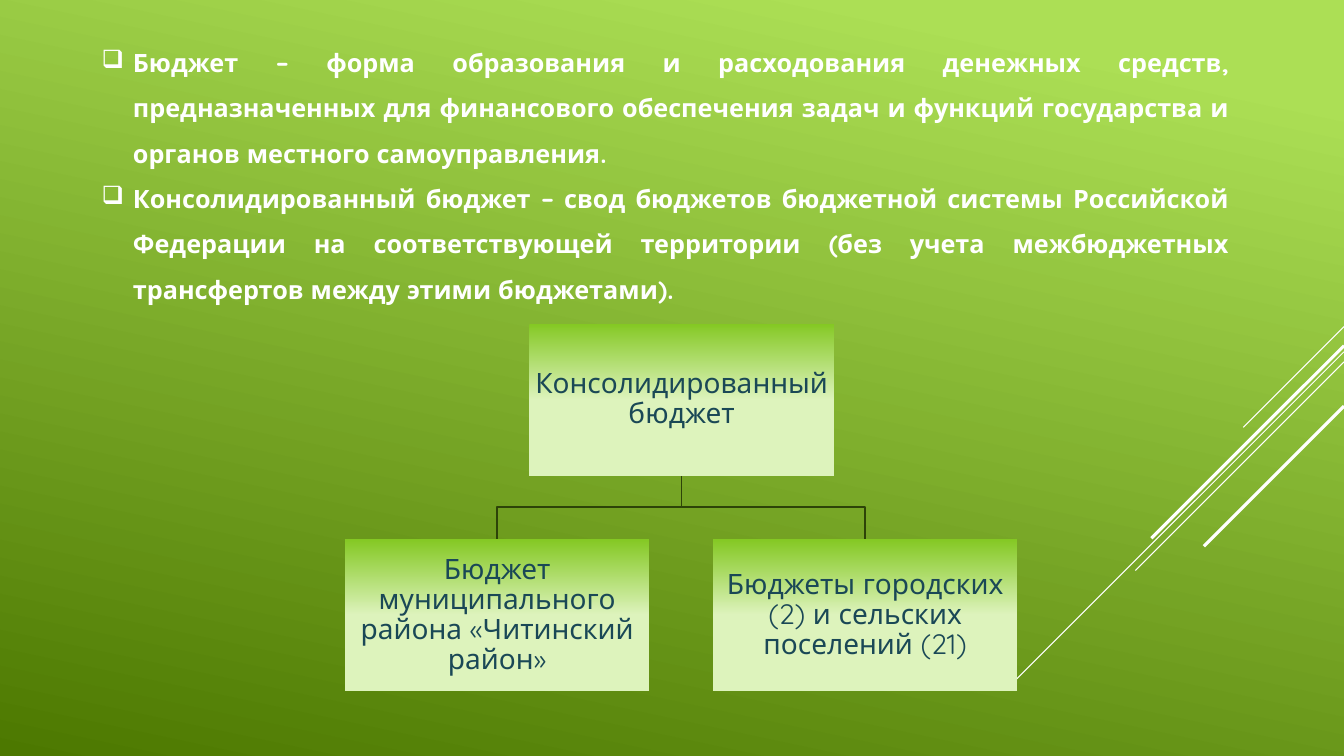
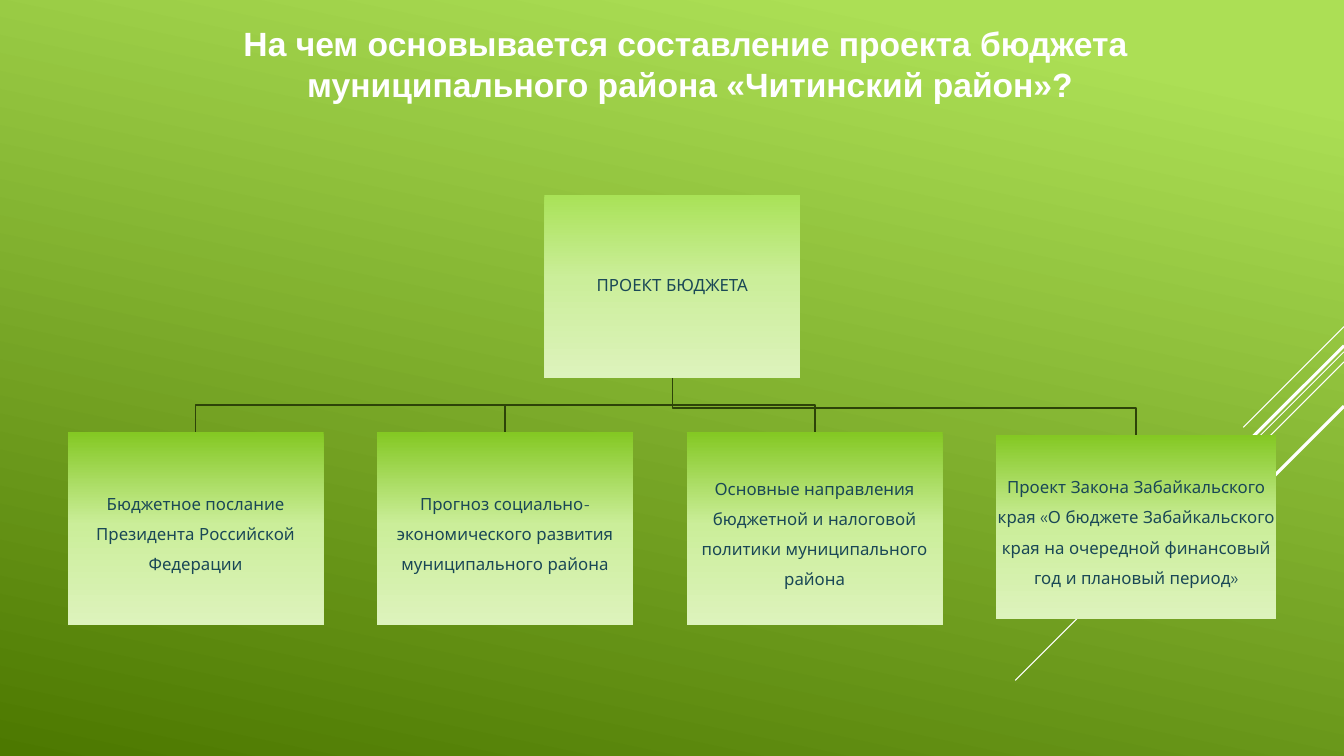
from dataclasses import dataclass

from lxml.etree import SubElement
from pptx import Presentation
from pptx.dml.color import RGBColor
from pptx.dml.fill import FillFormat
from pptx.enum.shapes import MSO_CONNECTOR, MSO_SHAPE
from pptx.enum.text import MSO_ANCHOR, MSO_AUTO_SIZE, PP_ALIGN
from pptx.oxml.ns import qn
from pptx.oxml.xmlchemy import BaseOxmlElement
from pptx.slide import Slide
from pptx.text.text import Font
from pptx.util import Inches, Pt

WIDTH, HEIGHT = 13.33, 7.5
TITLE_ONLY, BLANK = 5, 6
WHITE = "FFFFFF"
INK = "1A4856"
BRANCH = "2D4308"
BODY_FONT, TITLE_FONT = "Quicksand", "Arial"

Stops = tuple[tuple[int, str], ...]
BACKGROUND: Stops = ((10, "ACDF55"), (100, "4C7800"))
BUDGET_FILL: Stops = ((0, "84C823"), (50, "DDF3BC"), (100, "DDF3BC"))
PROJECT_FILL: Stops = ((0, "A9E257"), (46, "CBEE9A"), (100, "DDF3BC"))
BASIS_FILL: Stops = ((0, "84C823"), (48, "CBEE9A"), (100, "DDF3BC"))


@dataclass(frozen=True)
class Ray:
    """A 45-degree line running down and left from the right slide edge."""
    top: float
    run: float
    weight: float


@dataclass(frozen=True)
class Node:
    text: str
    left: float
    top: float
    width: float
    height: float
    stops: Stops
    size: int
    spacing: float = 0.9

    @property
    def center(self) -> float:
        return self.left + self.width / 2


RAYS = (
    Ray(3.24, 1.0, 0.75),
    Ray(3.49, 3.26, 0.75),
    Ray(3.59, 2.07, 0.75),
    Ray(3.43, 1.91, 2.25),
    Ray(4.03, 1.39, 2.25),
)

DEFINITIONS = (
    "Бюджет – форма образования и расходования денежных средств, предназначенных "
    "для финансового обеспечения задач и функций государства и органов местного "
    "самоуправления.",
    "Консолидированный бюджет – свод бюджетов бюджетной системы Российской "
    "Федерации на соответствующей территории (без учета межбюджетных трансфертов "
    "между этими бюджетами).",
)

BUDGET = Node("Консолидированный бюджет", 5.25, 3.21, 3.02, 1.51, BUDGET_FILL, 20)
BUDGET_PARTS = [
    Node(text, left, 5.35, 3.02, 1.51, BUDGET_FILL, 20)
    for text, left in (
        ("Бюджет муниципального района «Читинский район»", 3.42),
        ("Бюджеты городских (2) и сельских поселений (21)", 7.07),
    )
]

TITLE_LINES = (
    "На чем основывается составление проекта бюджета ",
    "муниципального района «Читинский район»?",
)
PROJECT = Node("ПРОЕКТ БЮДЖЕТА", 5.4, 1.93, 2.54, 1.82, PROJECT_FILL, 12)
BASIS_LEFT, BASIS_STEP = 0.67, 3.07
BASES = [
    Node(text, BASIS_LEFT + index * BASIS_STEP, top, width, height, BASIS_FILL, 12, 1.5)
    for index, (text, top, width, height) in enumerate((
        ("Бюджетное послание Президента Российской Федерации", 4.29, 2.54, 1.91),
        ("Прогноз социально-экономического развития муниципального района",
         4.29, 2.54, 1.91),
        ("Основные направления бюджетной и налоговой политики муниципального района",
         4.29, 2.54, 1.91),
        ("Проект Закона Забайкальского края «О бюджете Забайкальского края "
         "на очередной финансовый год и плановый период»", 4.32, 2.78, 1.82),
    ))
]


def color(code: str) -> RGBColor:
    return RGBColor.from_string(code)


def set_font(font: Font, name: str, size: int, code: str, bold: bool = False) -> None:
    font.name, font.size, font.bold = name, Pt(size), bold
    font.color.rgb = color(code)


def set_gradient(fill: FillFormat, element: BaseOxmlElement, stops: Stops, angle: int) -> None:
    """Fill with any number of stops; the angle is in degrees, clockwise."""
    fill.gradient()
    fill.gradient_angle = 360 - angle
    stop_list = next(element.iter(qn("a:gsLst")))
    for stop in list(stop_list):
        stop_list.remove(stop)
    for position, code in stops:
        stop = SubElement(stop_list, qn("a:gs"), pos=str(position * 1000))
        SubElement(stop, qn("a:srgbClr"), val=code)


def add_page(deck: Presentation, layout: int) -> Slide:
    page = deck.slides.add_slide(deck.slide_layouts[layout])
    for ray in RAYS:
        line = page.shapes.add_connector(
            MSO_CONNECTOR.STRAIGHT, Inches(WIDTH), Inches(ray.top),
            Inches(WIDTH - ray.run), Inches(ray.top + ray.run))
        line.line.color.rgb = color(WHITE)
        line.line.width = Pt(ray.weight)
        SubElement(line.element.spPr, qn("a:effectLst"))
    return page


def add_branch(page: Slide, parent: Node, child: Node, drop: float) -> None:
    """Draw an elbow that turns at the given height above the child."""
    bend = Inches(child.top - drop)
    start, end = Inches(parent.center), Inches(child.center)
    builder = page.shapes.build_freeform(start, Inches(parent.top + parent.height))
    builder.add_line_segments(
        [(start, bend), (end, bend), (end, Inches(child.top))], close=False)
    branch = builder.convert_to_shape()
    branch.shadow.inherit = False
    branch.fill.background()
    branch.line.color.rgb = color(BRANCH)
    branch.line.width = Pt(1.25)


def add_node(page: Slide, node: Node) -> None:
    box = page.shapes.add_shape(
        MSO_SHAPE.RECTANGLE, Inches(node.left), Inches(node.top),
        Inches(node.width), Inches(node.height))
    box.shadow.inherit = False
    set_gradient(box.fill, box.element, node.stops, 90)
    box.line.fill.background()
    frame = box.text_frame
    frame.word_wrap = True
    frame.vertical_anchor = MSO_ANCHOR.MIDDLE
    frame.margin_left = frame.margin_right = Inches(0.01)
    frame.margin_top = frame.margin_bottom = Inches(0.01)
    para = frame.paragraphs[0]
    para.text = node.text
    para.alignment = PP_ALIGN.CENTER
    para.line_spacing = node.spacing
    set_font(para.font, BODY_FONT, node.size, INK)


def add_tree(page: Slide, root: Node, children: list[Node], drop: float) -> None:
    for child in children:
        add_branch(page, root, child, drop)
    for node in (root, *children):
        add_node(page, node)


def add_definitions(page: Slide) -> None:
    box = page.shapes.add_textbox(Inches(0.91), Inches(0.27), Inches(11.38), Inches(2.83))
    frame = box.text_frame
    frame.word_wrap = True
    for index, text in enumerate(DEFINITIONS):
        para = frame.add_paragraph() if index else frame.paragraphs[0]
        para.text = text
        para.alignment = PP_ALIGN.JUSTIFY
        para.line_spacing = 1.5
        set_font(para.font, BODY_FONT, 18, WHITE, bold=True)
        properties = para._p.get_or_add_pPr()
        indent = Inches(0.31)
        properties.set("marL", str(indent))
        properties.set("indent", str(-indent))
        bullet = SubElement(properties, qn("a:buChar"), char="❑")
        properties.find(qn("a:defRPr")).addprevious(bullet)


def format_title(page: Slide) -> None:
    title = page.shapes.title
    title.left, title.top = Inches(1.64), Inches(0.18)
    title.width, title.height = Inches(10.41), Inches(0.91)
    frame = title.text_frame
    frame.text = "\n".join(TITLE_LINES)
    frame.auto_size = MSO_AUTO_SIZE.NONE
    frame.vertical_anchor = MSO_ANCHOR.TOP
    for para in frame.paragraphs:
        para.alignment = PP_ALIGN.CENTER
        set_font(para.font, TITLE_FONT, 24, WHITE, bold=True)


def main() -> None:
    deck = Presentation()
    deck.slide_width, deck.slide_height = Inches(WIDTH), Inches(HEIGHT)
    master = deck.slide_master
    set_gradient(master.background.fill, master.element, BACKGROUND, 102)

    budget_page = add_page(deck, BLANK)
    add_definitions(budget_page)
    add_tree(budget_page, BUDGET, BUDGET_PARTS, 0.32)

    project_page = add_page(deck, TITLE_ONLY)
    format_title(project_page)
    add_tree(project_page, PROJECT, BASES, 0.27)

    deck.save("out.pptx")


if __name__ == "__main__":
    main()
